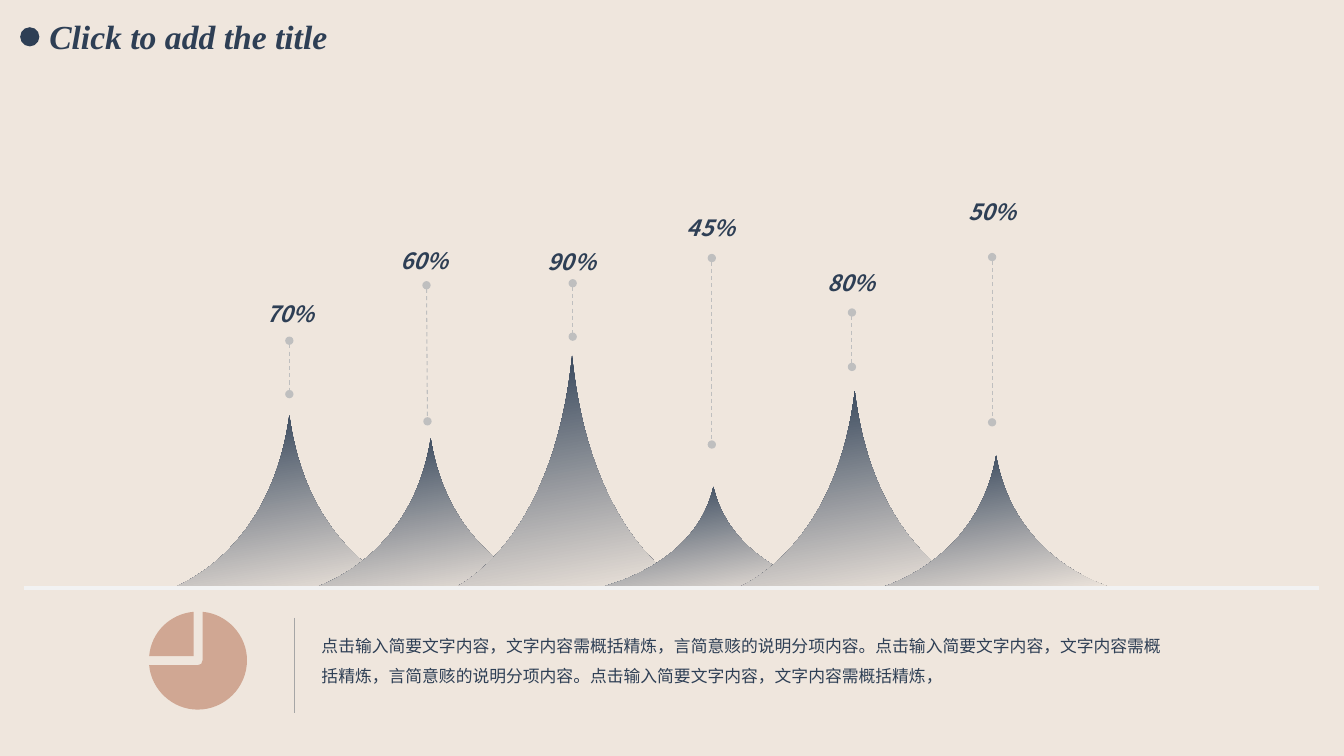
"""Build a slide of six gradient peaks with percentage labels and a summary."""
from dataclasses import dataclass

from lxml import etree
from pptx import Presentation
from pptx import util as u
from pptx.dml import color
from pptx.enum import dml, shapes, text
from pptx.oxml import ns

COLORS = {
    "navy": "2E3F55",
    "sand": "EFE6DD",
    "clay": "D0A793",
    "marker": "BFBFBF",
    "ground": "F2F2F2",
    "divider": "A6A6A6",
}
SANS = "Noto Sans CJK SC"
SERIF = "Times New Roman"
GROUND_Y = 5.84
FIRST_PEAK_X = 2.87
PEAK_PITCH = 1.402
HALF_WIDTH = 1.18
SUMMARY = (
    "点击输入简要文字内容，文字内容需概括精炼，言简意赅的说明分项内容。"
    "点击输入简要文字内容，文字内容需概括精炼，言简意赅的说明分项内容。"
    "点击输入简要文字内容，文字内容需概括精炼，"
)
Point = tuple[float, float]


@dataclass(frozen=True)
class Contour:
    """A closed outline whose segments hold one point (line) or three (curve)."""

    start: Point
    segments: list[tuple[Point, ...]]


@dataclass(frozen=True)
class Peak:
    label: str
    top: float
    label_left: float
    label_top: float
    marker_start: Point
    marker_end: Point


PEAKS = [
    Peak("70%", 4.12, 2.46, 2.93, (2.87, 3.38), (2.87, 3.91)),
    Peak("60%", 4.35, 3.79, 2.40, (4.23, 2.83), (4.24, 4.18)),
    Peak("90%", 3.53, 5.25, 2.41, (5.68, 2.81), (5.68, 3.34)),
    Peak("45%", 4.83, 6.63, 2.08, (7.06, 2.56), (7.06, 4.41)),
    Peak("80%", 3.88, 8.02, 2.62, (8.45, 3.10), (8.45, 3.64)),
    Peak("50%", 4.52, 9.42, 1.92, (9.84, 2.55), (9.84, 4.19)),
]
PIE_QUARTER = Contour((1.92, 6.51), [
    ((1.48, 6.51),),
    ((1.5, 6.27), (1.69, 6.09), (1.92, 6.07)),
    ((1.92, 6.51),),
])
PIE_REMAINDER = Contour((2.01, 6.07), [
    ((2.01, 6.55),),
    ((2.01, 6.58), (1.99, 6.6), (1.96, 6.6)),
    ((1.48, 6.6),),
    ((1.5, 6.84), (1.71, 7.04), (1.96, 7.04)),
    ((2.23, 7.04), (2.45, 6.82), (2.45, 6.55)),
    ((2.45, 6.3), (2.25, 6.09), (2.01, 6.07)),
])


def rgb(name: str) -> color.RGBColor:
    return color.RGBColor.from_string(COLORS[name])


def to_emu(point: Point) -> tuple[int, int]:
    return u.Inches(point[0]), u.Inches(point[1])


def add_outline(slide, contours: list[Contour]):
    builder = slide.shapes.build_freeform(*to_emu(contours[0].start))
    for index, contour in enumerate(contours):
        if index:
            builder.move_to(*to_emu(contour.start))
        points = [to_emu(point) for segment in contour.segments for point in segment]
        builder.add_line_segments(points, close=True)
    shape = builder.convert_to_shape()
    shape.shadow.inherit = False
    shape.line.fill.background()
    steps = iter(shape._element.findall(".//" + ns.qn("a:lnTo")))
    for segment in (segment for contour in contours for segment in contour.segments):
        nodes = [next(steps) for _ in segment]
        if len(nodes) == 3:
            curve = etree.Element(ns.qn("a:cubicBezTo"))
            nodes[0].addprevious(curve)
            for node in nodes:
                curve.append(node[0])
                node.getparent().remove(node)
    return shape


def add_peak(slide, center_x: float, top: float) -> None:
    tip = (center_x, top)
    shoulder_y = GROUND_Y - 0.18 * (GROUND_Y - top)
    right, left = (center_x + HALF_WIDTH, GROUND_Y), (center_x - HALF_WIDTH, GROUND_Y)
    shape = add_outline(slide, [Contour(right, [
        (right, (center_x + 0.19, shoulder_y), tip),
        ((center_x - 0.19, shoulder_y), left, left),
        (right,),
    ])])
    shape.fill.gradient()
    shape.fill.gradient_angle = 280
    for stop, position, name in zip(shape.fill.gradient_stops, (0, 1), ("navy", "sand")):
        stop.position = position
        stop.color.rgb = rgb(name)


def add_line(slide, start: Point, end: Point, name: str, width: float, marker: bool = False) -> None:
    connector = slide.shapes.add_connector(
        shapes.MSO_CONNECTOR.STRAIGHT, *to_emu(start), *to_emu(end)
    )
    connector.line.color.rgb = rgb(name)
    connector.line.width = u.Pt(width)
    if marker:
        connector.line.dash_style = dml.MSO_LINE.DASH
        for tag in ("a:headEnd", "a:tailEnd"):
            etree.SubElement(connector.line._get_or_add_ln(), ns.qn(tag), type="oval")
    etree.SubElement(connector._element.spPr, ns.qn("a:effectLst"))


def add_text(slide, box: tuple[float, float, float, float], words: str, font_name: str,
             size: float, emphasis: bool = True, label: bool = False, spacing: float = 1.0) -> None:
    frame = slide.shapes.add_textbox(*map(u.Inches, box)).text_frame
    frame.word_wrap = not label
    if not label:
        frame.auto_size = text.MSO_AUTO_SIZE.SHAPE_TO_FIT_TEXT
    paragraph = frame.paragraphs[0]
    paragraph.text = words
    paragraph.line_spacing = spacing
    if label:
        paragraph.alignment = text.PP_ALIGN.CENTER
    font = paragraph.font
    font.name = font_name
    font.size = u.Pt(size)
    font.bold = font.italic = emphasis
    font.color.rgb = rgb("navy")
    etree.SubElement(font._element, ns.qn("a:ea"), typeface=font_name)


def add_title(slide) -> None:
    add_text(slide, (0.39, 0.11, 3.15, 0.5), "Click to add the title", SERIF, 24)
    bullet = slide.shapes.add_shape(
        shapes.MSO_SHAPE.OVAL, u.Inches(0.2), u.Inches(0.27), u.Inches(0.19), u.Inches(0.19)
    )
    bullet.shadow.inherit = False
    bullet.fill.solid()
    bullet.fill.fore_color.rgb = rgb("navy")
    bullet.line.fill.background()


def add_pie_icon(slide) -> None:
    icon = add_outline(slide, [PIE_QUARTER, PIE_REMAINDER])
    icon.fill.solid()
    icon.fill.fore_color.rgb = rgb("clay")


def main() -> None:
    presentation = Presentation()
    presentation.slide_width, presentation.slide_height = u.Inches(13.33), u.Inches(7.5)
    slide = presentation.slides.add_slide(presentation.slide_layouts[6])
    slide.background.fill.solid()
    slide.background.fill.fore_color.rgb = rgb("sand")
    add_title(slide)
    for index, peak in enumerate(PEAKS):
        add_peak(slide, FIRST_PEAK_X + index * PEAK_PITCH, peak.top)
    for peak in PEAKS:
        add_line(slide, peak.marker_start, peak.marker_end, "marker", 0.75, marker=True)
    for peak in PEAKS:
        add_text(slide, (peak.label_left, peak.label_top, 0.84, 0.37), peak.label, SANS, 16, label=True)
    add_line(slide, (0.24, 5.83), (13.08, 5.83), "ground", 3)
    add_text(slide, (3.09, 6.16, 8.65, 0.67), SUMMARY, SANS, 12, emphasis=False, spacing=1.5)
    add_pie_icon(slide)
    add_line(slide, (2.92, 6.13), (2.92, 7.07), "divider", 0.5)
    presentation.save("out.pptx")


if __name__ == "__main__":
    main()
